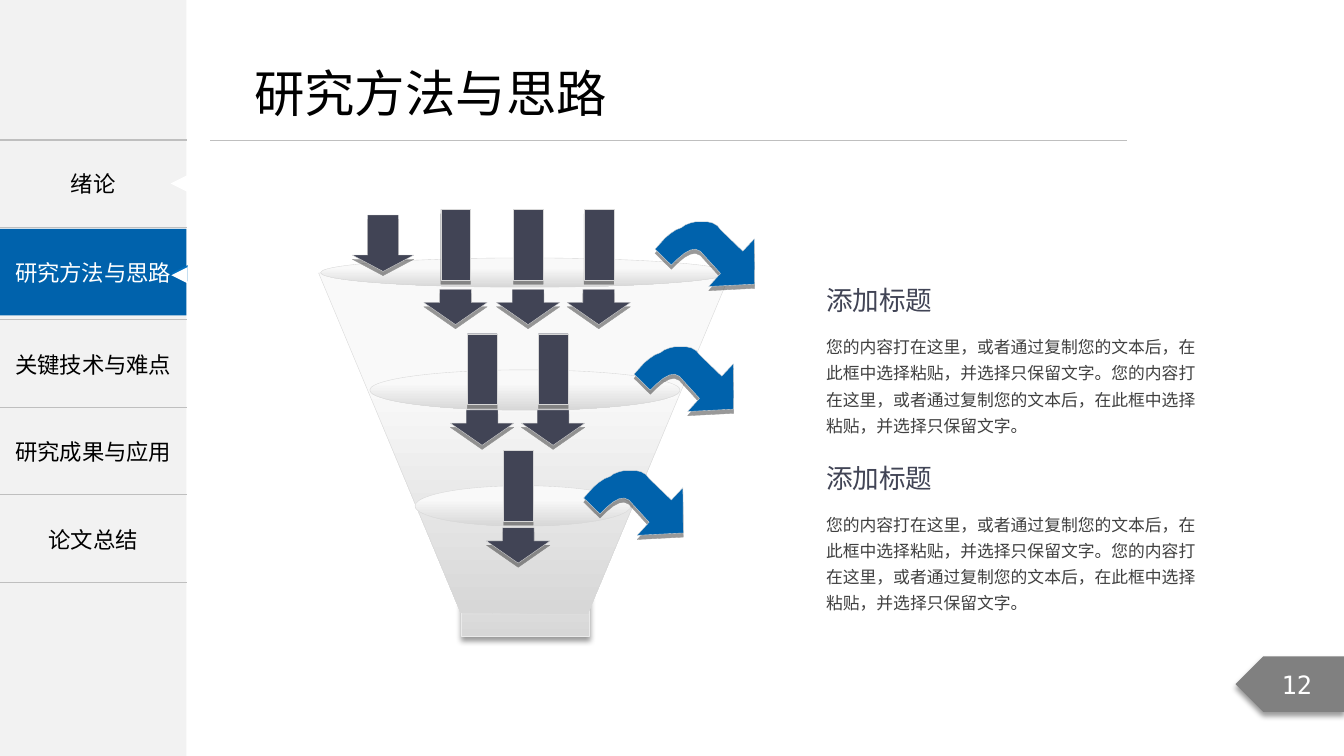
import lxml.etree
import pptx
import pptx.dml.color
import pptx.enum.shapes
import pptx.enum.text
import pptx.oxml.ns
import pptx.util

Cm = pptx.util.Cm
Pt = pptx.util.Pt
qn = pptx.oxml.ns.qn
SHAPES = pptx.enum.shapes.MSO_SHAPE
ALIGN = pptx.enum.text.PP_ALIGN
ANCHOR = pptx.enum.text.MSO_ANCHOR

CHINESE_FONT = "Noto Sans CJK SC"
BLUE, SLATE, WHITE, BLACK = "0062AC", "414455", "FFFFFF", "000000"
EDGE, RULE = "D7D7D7", "BFBFBF"
GRADIENT = ("F9F9F9", "D7D7D7")
HARD_SHADOW, SOFT_SHADOW = 0, 4

SIDEBAR_WIDTH = 4.7
ROW_HEIGHTS = [2.21, 2.31, 2.21, 2.21, 2.21]
MENU = ["", "", "关键技术与难点", "研究成果与应用", "论文总结"]
FUNNEL = [(8.03, 6.88), (11.61, 15.44), (14.81, 15.47), (18.39, 6.93)]
RIMS = [(8.08, 6.5, 10.29, 0.74), (9.32, 9.32, 7.82, 1.02), (10.46, 12.24, 5.44, 1.02)]
ARROW_ROWS = [
    (5.28, 2.01, [11.48, 13.31, 15.09]),
    (8.41, 1.92, [12.15, 13.94]),
    (11.35, 1.95, [13.06]),
]
CURVED_ARROW = [
    (2.5, 0.43), (2.51, 1.57), (1.35, 1.63), (1.65, 1.3), (1.14, 0.74), (1.02, 0.69),
    (0.89, 0.71), (0.74, 0.79), (0.56, 0.94), (0.41, 1.09), (0, 0.69), (0.25, 0.41),
    (0.38, 0.3), (0.53, 0.2), (0.66, 0.15), (0.76, 0.08), (0.89, 0.03), (1.02, 0),
    (1.32, 0), (1.45, 0.03), (1.57, 0.1), (1.65, 0.2), (2.21, 0.74),
]
CURVED_POSITIONS = [(15.98, 8.74), (14.71, 11.86), (16.51, 5.59)]
HEADING = "添加标题"
SENTENCE = "您的内容打在这里，或者通过复制您的文本后，在此框中选择粘贴，并选择只保留文字。"


def colour(value):
    return pptx.dml.color.RGBColor.from_string(value)


def assign(target, values):
    for name, value in values.items():
        setattr(target, name, value)


def lengths(values):
    return [Cm(value) for value in values]


class SlideBuilder:
    def __init__(self, slide):
        self.slide = slide
        self.shapes = slide.shapes

    def style(self, shape, fill, line=None, shadow=None):
        shape.shadow.inherit = False
        if isinstance(fill, tuple):
            shape.fill.gradient()
            shape.fill.gradient_angle = 270
            for stop, position, value in zip(shape.fill.gradient_stops, (0.33, 1), fill):
                stop.position = position
                stop.color.rgb = colour(value)
        else:
            shape.fill.solid()
            shape.fill.fore_color.rgb = colour(fill)
        if line:
            shape.line.color.rgb = colour(line)
            shape.line.width = Pt(0.25)
        else:
            shape.line.fill.background()
        if shadow is not None:
            effects = shape._element.spPr.find(qn("a:effectLst"))
            outer = lxml.etree.SubElement(
                effects, qn("a:outerShdw"), blurRad=str(Pt(shadow)),
                dist=str(Pt(3)), dir="5400000", algn="t", rotWithShape="0")
            tint = lxml.etree.SubElement(outer, qn("a:srgbClr"), val=BLACK)
            lxml.etree.SubElement(tint, qn("a:alpha"), val="40000")
        return shape

    def shape(self, kind, box, fill, line=None, shadow=None, adjustments=()):
        shape = self.shapes.add_shape(kind, *lengths(box))
        for index, value in enumerate(adjustments):
            shape.adjustments[index] = value
        return self.style(shape, fill, line, shadow)

    def outline(self, points, fill, line, shadow=None, origin=(0, 0)):
        corners = [lengths(point) for point in points]
        builder = self.shapes.build_freeform(*corners[0])
        builder.add_line_segments(corners[1:], close=True)
        return self.style(builder.convert_to_shape(*lengths(origin)), fill, line, shadow)

    def add_text(self, frame, text, size, value, font=CHINESE_FONT,
                 alignment=ALIGN.CENTER, spacing=1.0):
        paragraph = frame.paragraphs[0]
        assign(paragraph, {"alignment": alignment, "line_spacing": spacing})
        run = paragraph.add_run()
        run.text = text
        assign(run.font, {"size": Pt(size), "name": font})
        run.font.color.rgb = colour(value)
        lxml.etree.SubElement(run.font._element, qn("a:ea"), typeface=font)

    def label(self, shape, text, size, value, font=CHINESE_FONT):
        assign(shape.text_frame, {"word_wrap": True, "vertical_anchor": ANCHOR.MIDDLE})
        self.add_text(shape.text_frame, text, size, value, font)

    def textbox(self, box):
        return self.shapes.add_textbox(*lengths(box))

    def passage(self, box, text, size, value, spacing=1.0):
        frame = self.textbox(box).text_frame
        assign(frame, {"word_wrap": True, "margin_left": Cm(0.3), "margin_right": Cm(0.3),
                       "margin_top": Cm(0.15), "margin_bottom": Cm(0.15)})
        self.add_text(frame, text, size, value, alignment=ALIGN.LEFT, spacing=spacing)

    def title(self, box, text):
        title = self.shapes.title
        assign(title, dict(zip(("left", "top", "width", "height"), lengths(box))))
        assign(title.text_frame, {"word_wrap": False, "vertical_anchor": ANCHOR.TOP,
                                  "auto_size": pptx.enum.text.MSO_AUTO_SIZE.NONE})
        self.add_text(title.text_frame, text, 36, BLACK, alignment=ALIGN.LEFT)

    def rule(self, start, end):
        straight = pptx.enum.shapes.MSO_CONNECTOR.STRAIGHT
        connector = self.shapes.add_connector(straight, *lengths(start + end))
        connector.line.color.rgb = colour(RULE)
        connector.line.width = Pt(0.5)
        lxml.etree.SubElement(connector._element.spPr, qn("a:effectLst"))

    def menu_table(self, left, top, width, heights, labels):
        box = lengths((left, top, width, sum(heights)))
        table = self.shapes.add_table(len(labels), 1, *box).table
        assign(table, {"first_row": False, "horz_banding": False})
        for row, height, text in zip(table.rows, heights, labels):
            row.height = Cm(height)
            cell = row.cells[0]
            cell.vertical_anchor = ANCHOR.MIDDLE
            properties = cell._tc.get_or_add_tcPr()
            for side in ("lnL", "lnR", "lnT", "lnB"):
                border = lxml.etree.SubElement(properties, qn("a:" + side), w=str(Pt(1)))
                if side in ("lnL", "lnR"):
                    lxml.etree.SubElement(border, qn("a:noFill"))
                else:
                    fill = lxml.etree.SubElement(border, qn("a:solidFill"))
                    lxml.etree.SubElement(fill, qn("a:srgbClr"), val=RULE)
            cell.fill.background()
            if text:
                self.add_text(cell.text_frame, text, 16, BLACK)

    def pointer(self, left, top, fill):
        self.shape(SHAPES.ISOSCELES_TRIANGLE, (left, top, 0.41, 0.41), fill).rotation = 270

    def down_arrow(self, box, head):
        self.shape(SHAPES.DOWN_ARROW, box, SLATE, EDGE, HARD_SHADOW, (0.5, head))


def main():
    presentation = pptx.Presentation()
    assign(presentation, {"slide_width": Cm(33.87), "slide_height": Cm(19.05)})
    builder = SlideBuilder(presentation.slides.add_slide(presentation.slide_layouts[5]))

    builder.shape(SHAPES.RECTANGLE, (0, 0, SIDEBAR_WIDTH, 19.05), "F2F2F2")
    builder.rule((5.3, 3.53), (28.4, 3.53))
    builder.title((6.15, 1.45, 9.5, 1.8), "研究方法与思路")
    page = builder.shape(SHAPES.PENTAGON, (31.14, 16.54, 2.74, 1.4), "808080",
                         shadow=SOFT_SHADOW)
    page._element.spPr.xfrm.set("flipH", "1")
    builder.label(page, "12", 18, WHITE, "DejaVu Sans Mono")

    builder.menu_table(0, 3.53, SIDEBAR_WIDTH, ROW_HEIGHTS, MENU)
    builder.label(builder.textbox((0, 3.53, SIDEBAR_WIDTH, 2.18)), "绪论", 16, BLACK)
    builder.pointer(4.3, 4.42, WHITE)
    current = builder.shape(SHAPES.RECTANGLE, (0, 5.77, SIDEBAR_WIDTH, 2.18), BLUE)
    builder.label(current, "研究方法与思路", 16, WHITE)
    builder.pointer(4.32, 6.68, "0070C0")
    builder.pointer(4.32, 6.73, WHITE)

    builder.shape(SHAPES.RECTANGLE, (11.63, 11.56, 3.23, 4.47), GRADIENT, "EAEAEA", SOFT_SHADOW)
    builder.outline(FUNNEL, GRADIENT, EDGE)
    for rim in RIMS:
        builder.shape(SHAPES.OVAL, rim, GRADIENT, EDGE)

    for position in CURVED_POSITIONS:
        builder.outline(CURVED_ARROW, BLUE, EDGE, HARD_SHADOW, position)
    for top, head_offset, centres in ARROW_ROWS:
        for centre in centres:
            builder.down_arrow((centre - 0.8, top + head_offset, 1.6, 0.89), 0.625)
            builder.shape(SHAPES.RECTANGLE, (centre - 0.37, top, 0.75, 1.78),
                          SLATE, EDGE, HARD_SHADOW)
    builder.down_arrow((8.88, 5.42, 1.55, 1.42), 0.29)

    for top in (7.01, 11.48):
        builder.passage((20.52, top, 9.93, 1.12), HEADING, 19, SLATE)
        builder.passage((20.52, top + 1.18, 9.93, 2.9), SENTENCE * 2, 12, "404040", 1.3)

    presentation.save("out.pptx")


if __name__ == "__main__":
    main()
